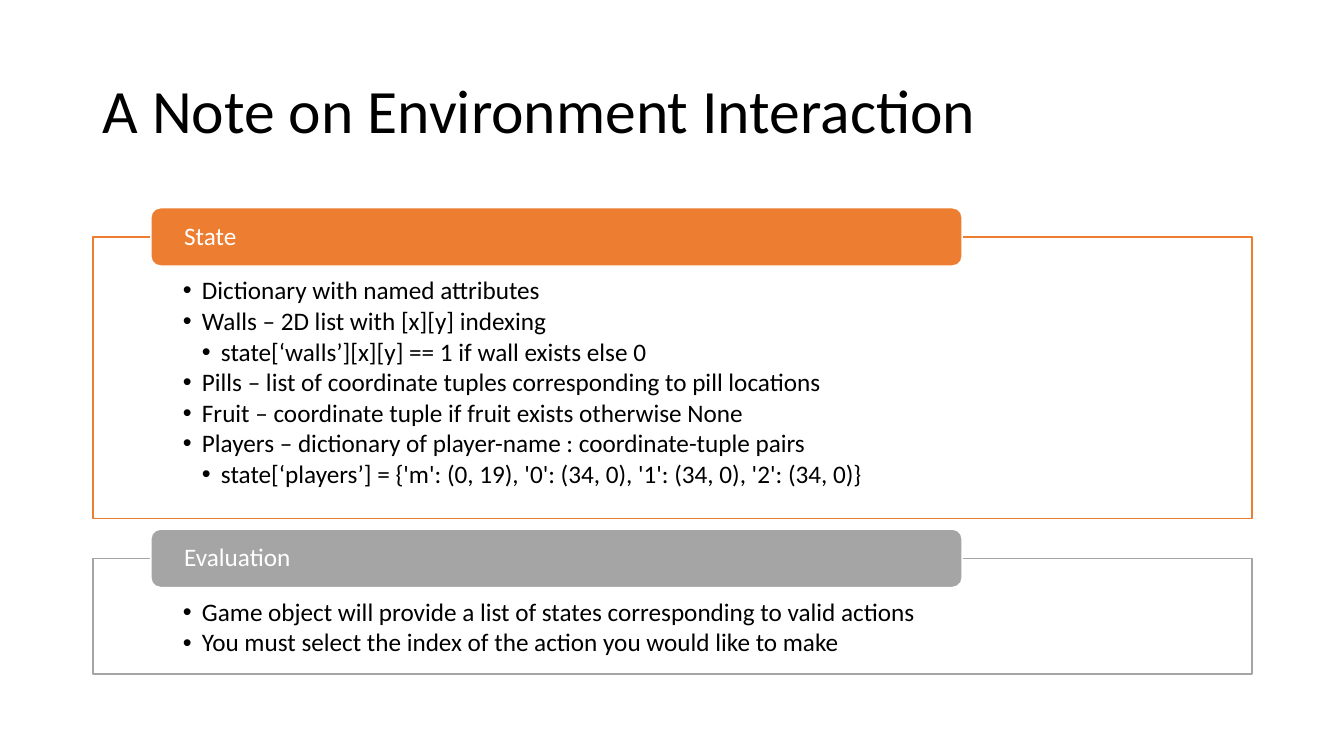
from dataclasses import dataclass

from lxml.etree import SubElement
from pptx import Presentation
from pptx.dml.color import RGBColor
from pptx.enum.shapes import MSO_SHAPE as Preset
from pptx.enum.text import MSO_ANCHOR as Anchor, PP_ALIGN as Align
from pptx.oxml.ns import qn
from pptx.util import Cm, Pt


@dataclass(frozen=True)
class Theme:
    font: str = "Calibri"
    title_size: int = 44
    text_size: int = 18
    line_width: int = 1
    ink: str = "000000"
    paper: str = "FFFFFF"
    state: str = "ED7D31"
    evaluation: str = "A5A5A5"


@dataclass(frozen=True)
class Box:
    left: float
    top: float
    width: float
    height: float

    def lengths(self):
        return [Cm(n) for n in (self.left, self.top, self.width, self.height)]


THEME = Theme()
TITLE_BOX = Box(2.34, 1.02, 29.21, 3.68)
SECTIONS = [
    ("State", THEME.state, Box(2.34, 5.97, 29.21, 7.09), [
        (1, "Dictionary with named attributes"),
        (1, "Walls – 2D list with [x][y] indexing"),
        (2, "state[‘walls’][x][y] == 1 if wall exists else 0"),
        (1, "Pills – list of coordinate tuples corresponding to pill locations"),
        (1, "Fruit – coordinate tuple if fruit exists otherwise None"),
        (1, "Players – dictionary of player-name : coordinate-tuple pairs"),
        (2, "state[‘players’] = {'m': (0, 19), '0': (34, 0), '1': (34, 0), '2': (34, 0)}"),
    ]),
    ("Evaluation", THEME.evaluation, Box(2.34, 14.07, 29.21, 2.92), [
        (1, "Game object will provide a list of states corresponding to valid actions"),
        (1, "You must select the index of the action you would like to make"),
    ]),
]


def set_frame(frame, anchor, left, top, right, bottom):
    frame.word_wrap = True
    frame.vertical_anchor = anchor
    frame.margin_left, frame.margin_top = Cm(left), Cm(top)
    frame.margin_right, frame.margin_bottom = Cm(right), Cm(bottom)


def add_span(para, text, size, color):
    para.alignment = Align.LEFT
    para.line_spacing = 0.9
    span = para.add_run()
    span.text = text
    span.font.name = THEME.font
    span.font.size = Pt(size)
    span.font.color.rgb = RGBColor.from_string(color)


def add_panel(page, preset, box, fill, line):
    panel = page.shapes.add_shape(preset, *box.lengths())
    panel.shadow.inherit = False
    panel.fill.solid()
    panel.fill.fore_color.rgb = RGBColor.from_string(fill)
    panel.line.color.rgb = RGBColor.from_string(line)
    panel.line.width = Pt(THEME.line_width)
    return panel


def set_bullet(para, level):
    para.level = level
    para.space_after = Pt(2.4)
    props = para._p.get_or_add_pPr()
    indent = Cm(0.48)
    props.set("marL", str(indent * level))
    props.set("indent", str(-indent))
    SubElement(props, qn("a:buFont"), typeface="Arial")
    SubElement(props, qn("a:buChar"), char="•")


def add_title(page, box, text):
    frame = page.shapes.add_textbox(*box.lengths()).text_frame
    set_frame(frame, Anchor.MIDDLE, 0.25, 0.13, 0.25, 0.13)
    add_span(frame.paragraphs[0], text, THEME.title_size, THEME.ink)


def add_section(page, box, heading, color, items):
    body = add_panel(page, Preset.RECTANGLE, box, THEME.paper, color)
    paint = body.element.spPr.find(qn("a:solidFill")).find(qn("a:srgbClr"))
    SubElement(paint, qn("a:alpha"), val="90000")
    frame = body.text_frame
    set_frame(frame, Anchor.TOP, 2.27, 1.04, 2.27, 0.36)
    for index, (level, text) in enumerate(items):
        para = frame.add_paragraph() if index else frame.paragraphs[0]
        add_span(para, text, THEME.text_size, THEME.ink)
        set_bullet(para, level)

    tab_height = 1.47
    tab_box = Box(box.left + box.width * 0.05, box.top - tab_height / 2,
                  box.width * 0.7, tab_height)
    tab = add_panel(page, Preset.ROUNDED_RECTANGLE, tab_box, color, THEME.paper)
    set_frame(tab.text_frame, Anchor.MIDDLE, 0.77, 0, 0.77, 0)
    add_span(tab.text_frame.paragraphs[0], heading, THEME.text_size, THEME.paper)


def main():
    deck = Presentation()
    deck.slide_width, deck.slide_height = Cm(33.87), Cm(19.05)
    page = deck.slides.add_slide(deck.slide_layouts[6])
    add_title(page, TITLE_BOX, "A Note on Environment Interaction")
    for heading, color, box, items in SECTIONS:
        add_section(page, box, heading, color, items)
    deck.save("out.pptx")


if __name__ == "__main__":
    main()
